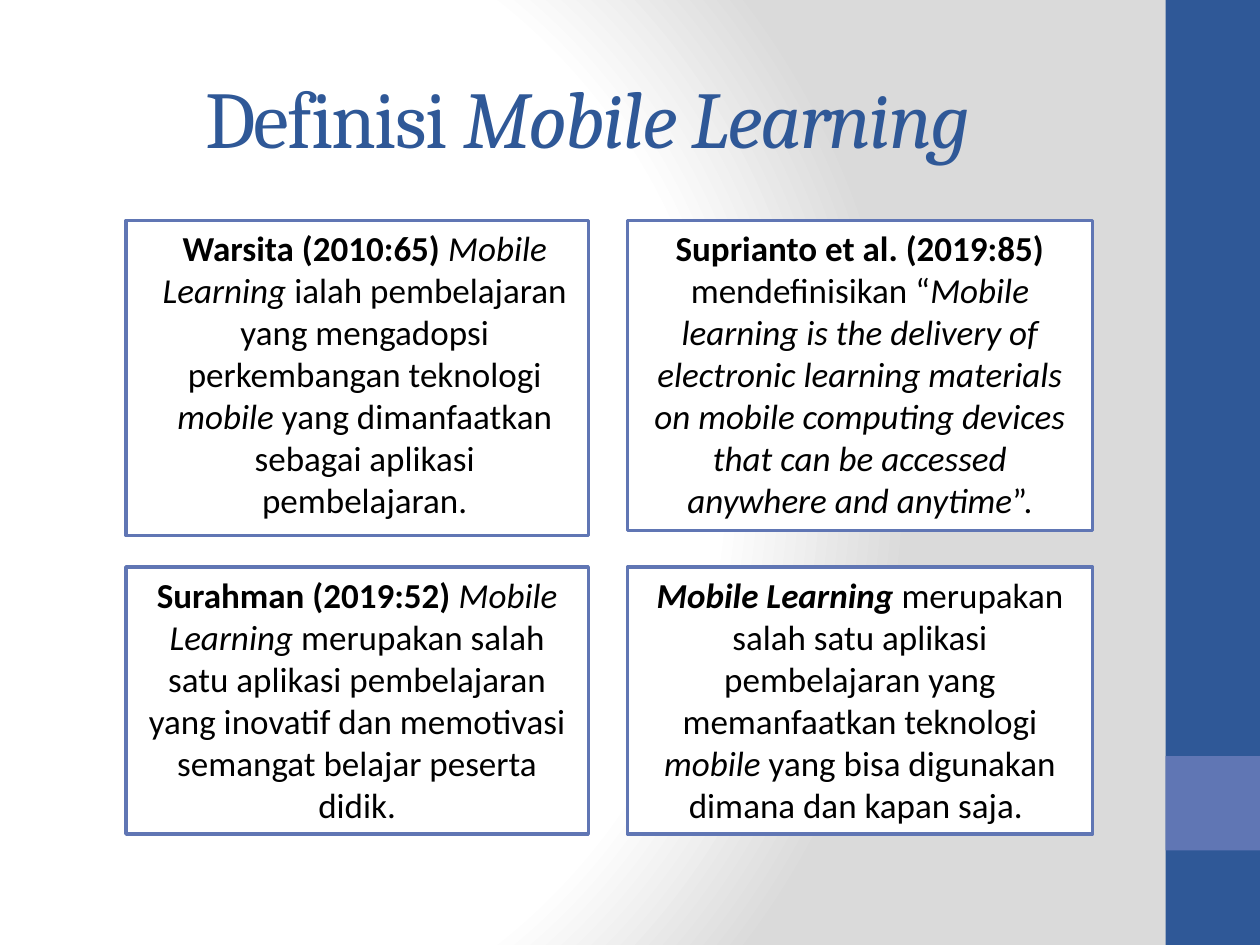
from pptx import Presentation
from pptx.dml.color import RGBColor
from pptx.enum.shapes import MSO_SHAPE
from pptx.enum.text import MSO_ANCHOR, PP_ALIGN
from pptx.oxml import parse_xml
from pptx.oxml.ns import nsdecls
from pptx.util import Inches, Pt

COLORS = {"navy": "2F5897", "violet": "6076B4", "white": "FFFFFF",
          "grey": "DADADA", "black": "000000"}
STYLES = {"plain": {}, "bold": {"bold": True}, "italic": {"italic": True},
          "both": {"bold": True, "italic": True}}

deck = Presentation()
deck.slide_width, deck.slide_height = Inches(10), Inches(7.5)
slide = deck.slides.add_slide(deck.slide_layouts[6])


def add_panel(left, top, width, height, fill, line=None):
    panel = slide.shapes.add_shape(MSO_SHAPE.RECTANGLE, *map(Inches, (left, top, width, height)))
    panel.shadow.inherit = False
    panel.fill.solid()
    panel.fill.fore_color.rgb = RGBColor.from_string(COLORS[fill])
    if line:
        panel.line.color.rgb = RGBColor.from_string(COLORS[line])
        panel.line.width = Pt(2)
    else:
        panel.line.fill.background()
    return panel


def write_runs(frame, pieces, font_name, size, color, anchor):
    frame.word_wrap = True
    frame.vertical_anchor = anchor
    paragraph = frame.paragraphs[0]
    paragraph.alignment = PP_ALIGN.CENTER
    for style, words in pieces:
        run = paragraph.add_run()
        run.text = words
        run.font.color.rgb = RGBColor.from_string(COLORS[color])
        font_format = {"name": font_name, "size": Pt(size), "bold": False, "italic": False}
        for attribute, value in (font_format | STYLES[style]).items():
            setattr(run.font, attribute, value)
    return paragraph


# Background: circular gradient centred towards the left
stops = "".join(f'<a:gs pos="{share * 1000}"><a:srgbClr val="{COLORS[name]}"/></a:gs>'
                for share, name in ((0, "white"), (75, "white"), (100, "grey")))
slide.element.cSld.insert(0, parse_xml(
    f'<p:bg {nsdecls("p", "a")}><p:bgPr><a:gradFill rotWithShape="1"><a:gsLst>{stops}</a:gsLst>'
    '<a:path path="circle"><a:fillToRect l="20000" t="50000" r="100000" b="50000"/></a:path>'
    '</a:gradFill><a:effectLst/></p:bgPr></p:bg>'))

# Side band with its accent square
band_width = 0.75
band_left = 10 - band_width
add_panel(band_left, 0, band_width, 7.5, "navy")
add_panel(band_left, 6, band_width, band_width, "violet")

# Title
title = slide.shapes.add_textbox(Inches(0.5), Inches(0.3), Inches(8.33), Inches(1.25))
heading = write_runs(title.text_frame, [("plain", "Definisi "), ("italic", "Mobile Learning")],
                     "Cambria", 46, "navy", MSO_ANCHOR.MIDDLE)
for run in heading.runs:
    run.font._element.set("spc", "-100")

# Definitions on a grid of two columns and two rows: column, row, height, indent, runs
columns = [(1, 3.67), (4.98, 3.69)]
rows = [1.75, 4.5]
definitions = [
    (0, 0, 2.5, 0.12, [
        ("bold", "Warsita (2010:65) "), ("italic", "Mobile Learning "),
        ("plain", "ialah pembelajaran yang mengadopsi perkembangan teknologi "),
        ("italic", "mobile"),
        ("plain", " yang dimanfaatkan sebagai aplikasi pembelajaran.")]),
    (1, 0, 2.46, 0, [
        ("bold", "Suprianto et al. (2019:85) "), ("plain", "mendefinisikan “"),
        ("italic", "Mobile learning is the delivery of electronic learning materials on "
                   "mobile computing devices that can be accessed anywhere and anytime"),
        ("plain", "”.")]),
    (0, 1, 2.12, 0, [
        ("bold", "Surahman (2019:52) "), ("italic", "Mobile Learning "),
        ("plain", "merupakan salah satu aplikasi pembelajaran yang inovatif dan "
                  "memotivasi semangat belajar peserta didik.")]),
    (1, 1, 2.12, 0, [
        ("both", "Mobile Learning "),
        ("plain", "merupakan salah satu aplikasi pembelajaran yang memanfaatkan teknologi "),
        ("italic", "mobile "),
        ("plain", "yang bisa digunakan dimana dan kapan saja. ")]),
]
for column, row, height, indent, pieces in definitions:
    left, width = columns[column]
    box = add_panel(left, rows[row], width, height, "white", "violet")
    definition = write_runs(box.text_frame, pieces, "Calibri", 20, "black", MSO_ANCHOR.TOP)
    if indent:
        definition._p.get_or_add_pPr().set("marL", str(Inches(indent)))

deck.save("out.pptx")
